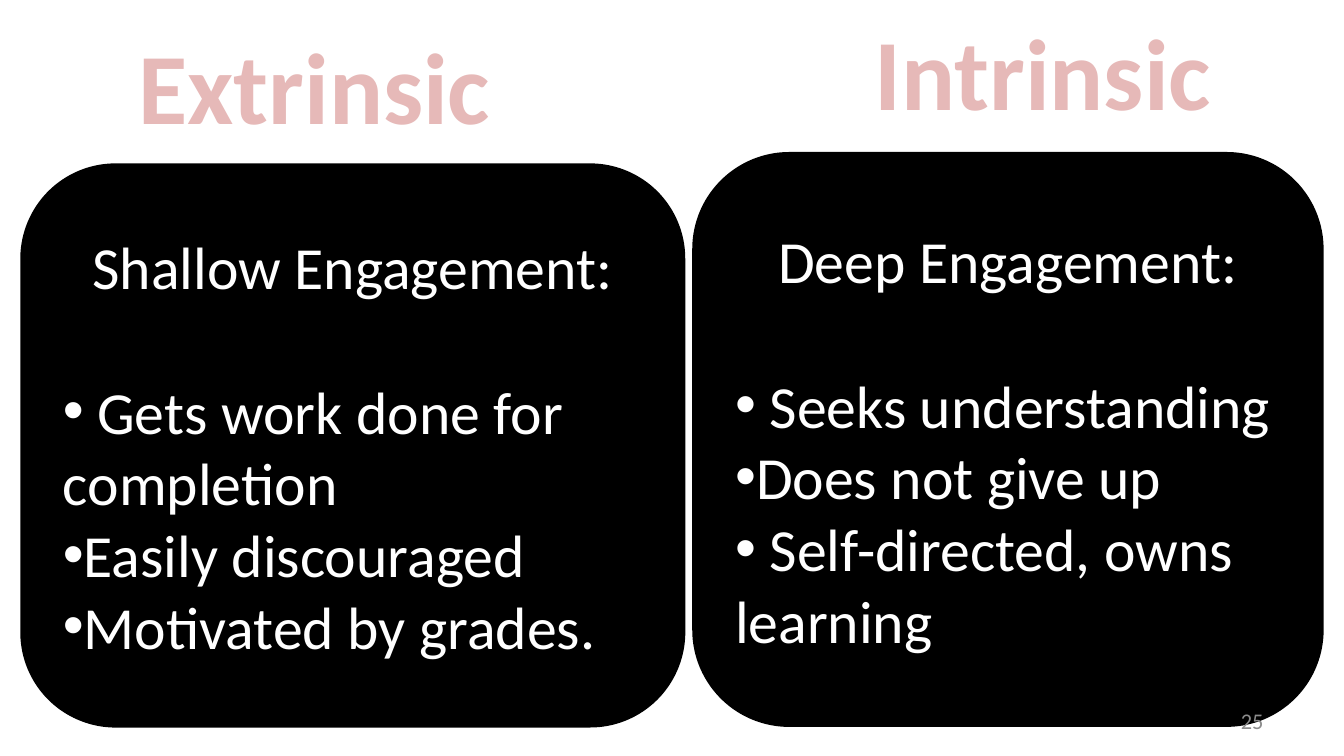
from lxml import etree
from pptx import Presentation
from pptx.dml.color import RGBColor
from pptx.enum.shapes import MSO_SHAPE
from pptx.enum.text import MSO_ANCHOR, MSO_AUTO_SIZE, PP_ALIGN
from pptx.oxml.ns import qn
from pptx.util import Emu, Pt

ROUNDED = MSO_SHAPE.ROUNDED_RECTANGLE
TOP, MIDDLE = MSO_ANCHOR.TOP, MSO_ANCHOR.MIDDLE
FIT_SHAPE = MSO_AUTO_SIZE.SHAPE_TO_FIT_TEXT
LEFT, CENTER, RIGHT = PP_ALIGN.LEFT, PP_ALIGN.CENTER, PP_ALIGN.RIGHT

EMU_PER_PX = 4572  # 200 px to the inch
SLIDE_WIDTH, SLIDE_HEIGHT = 2000, 1125
COMPARISON_LAYOUT = 4
COLORS = {
    "card": "000000",
    "card_text": "FFFFFF",
    "heading": "E6B9B8",
    "heading_outline": "C0504D",
    "page_number": "8C8C8C",
}
FORMATS = {
    "heading": {"size": Pt(54), "bold": True, "name": "Calibri"},
    "card_text": {"size": Pt(32), "name": "Calibri"},
    "page_number": {"size": Pt(12), "name": "Calibri"},
}
# Heading placeholder index, heading and card boxes, then the wording
COLUMNS = [
    (1, (183, 26, 604, 202), (33, 246, 984, 834), "Extrinsic ",
     "Shallow Engagement:",
     [" Gets work done for completion", "Easily discouraged",
      "Motivated by grades."]),
    (3, (1278, 4, 582, 202), (1033, 229, 934, 850), "Intrinsic ",
     "Deep Engagement:",
     [" Seeks understanding", "Does not give up",
      " Self-directed, owns learning"]),
]


def px(length):
    return Emu(length * EMU_PER_PX)


def rgb(role):
    return RGBColor.from_string(COLORS[role])


def write(paragraph, text, role, alignment):
    paragraph.alignment = alignment
    run = paragraph.add_run()
    run.text = text
    for attribute, value in FORMATS[role].items():
        setattr(run.font, attribute, value)
    run.font.color.rgb = rgb(role)
    return run


def add_bullet(paragraph):
    properties = paragraph._p.get_or_add_pPr()
    etree.SubElement(properties, qn("a:buFont"), typeface="Arial")
    etree.SubElement(properties, qn("a:buChar"), char="•")


def outline_text(run, role, width):
    line = etree.Element(qn("a:ln"), w=str(width))
    fill = etree.SubElement(line, qn("a:solidFill"))
    etree.SubElement(fill, qn("a:srgbClr"), val=COLORS[role])
    run._r.get_or_add_rPr().insert(0, line)


def place_heading(heading, box, text):
    heading.left, heading.top, heading.width, heading.height = map(px, box)
    frame = heading.text_frame
    frame.word_wrap = False
    frame.auto_size = FIT_SHAPE
    frame.vertical_anchor = TOP
    frame.paragraphs[0].space_before = Pt(0)
    run = write(frame.paragraphs[0], text, "heading", CENTER)
    outline_text(run, "heading_outline", Pt(1.75))


def add_card(slide, box, engagement, traits):
    card = slide.shapes.add_shape(ROUNDED, *map(px, box))
    card.shadow.inherit = False
    card.fill.solid()
    card.fill.fore_color.rgb = rgb("card")
    card.line.color.rgb = rgb("card")
    card.line.width = Pt(2)
    frame = card.text_frame
    frame.word_wrap = True
    frame.vertical_anchor = MIDDLE
    lead = frame.paragraphs[0]
    lead.space_after = Pt(39)
    write(lead, engagement, "card_text", CENTER)
    for trait in traits:
        item = frame.add_paragraph()
        write(item, trait, "card_text", LEFT)
        add_bullet(item)


def add_page_number(slide, box, number):
    frame = slide.shapes.add_textbox(*map(px, box)).text_frame
    frame.word_wrap = True
    frame.vertical_anchor = MIDDLE
    write(frame.paragraphs[0], number, "page_number", RIGHT)


def main():
    deck = Presentation()
    deck.slide_width, deck.slide_height = px(SLIDE_WIDTH), px(SLIDE_HEIGHT)
    slide = deck.slides.add_slide(deck.slide_layouts[COMPARISON_LAYOUT])

    # Two columns: heading above a card
    headings = {holder.placeholder_format.idx: holder
                for holder in slide.placeholders}
    for index, heading_box, card_box, title, engagement, traits in COLUMNS:
        place_heading(headings.pop(index), heading_box, title)
        add_card(slide, card_box, engagement, traits)

    # Unused placeholders
    for holder in headings.values():
        holder.element.getparent().remove(holder.element)

    # Page number over the right card
    add_page_number(slide, (1434, 1042, 466, 60), "25")
    deck.save("out.pptx")


if __name__ == "__main__":
    main()
